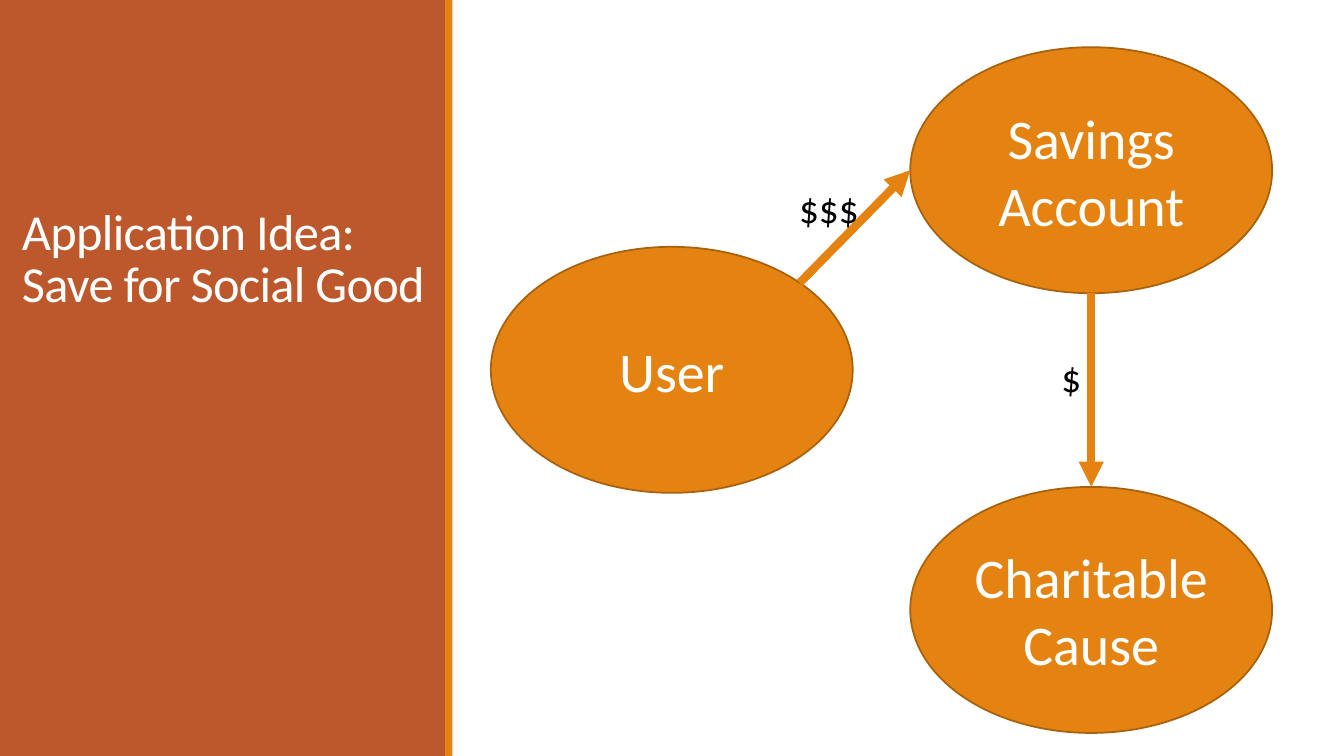
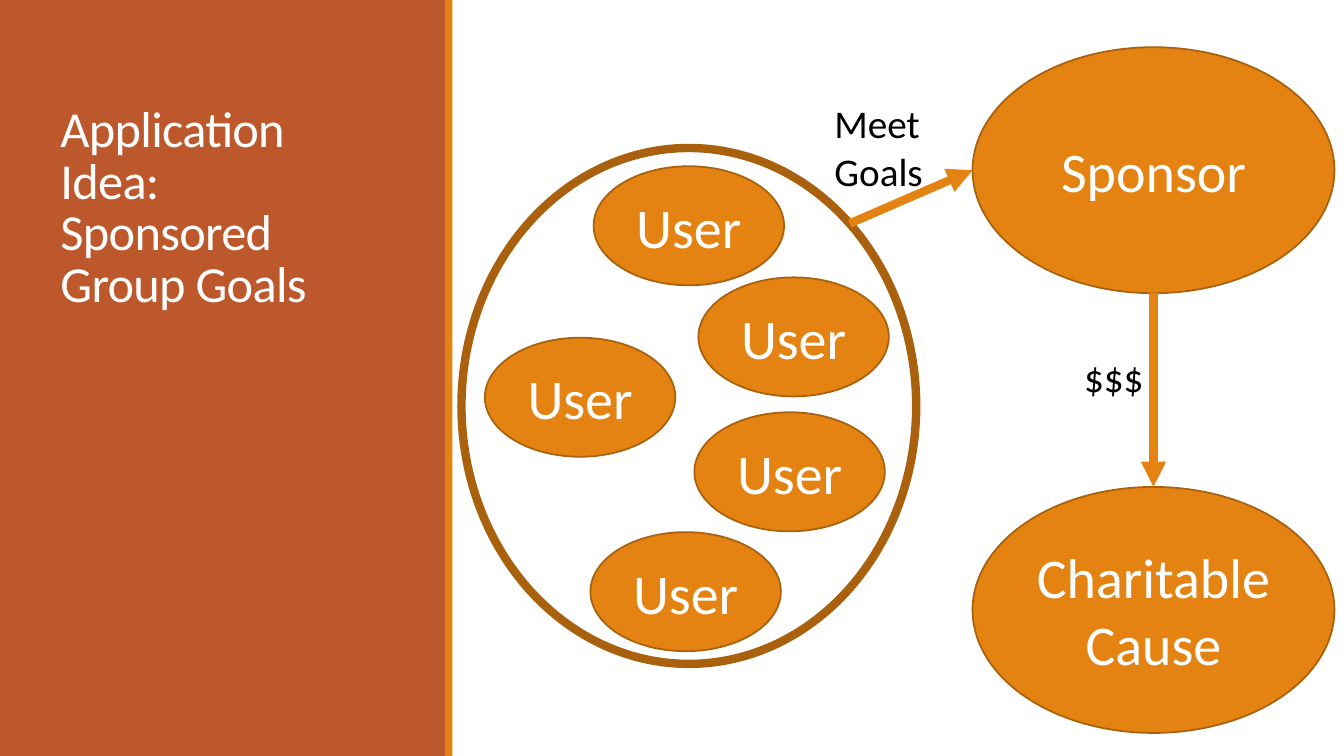
import math

import pptx
import pptx.dml.color
import pptx.enum.shapes
import pptx.enum.text
import pptx.oxml
import pptx.oxml.ns
import pptx.util
from lxml import etree

Cm, Pt = pptx.util.Cm, pptx.util.Pt
Shape = pptx.enum.shapes.MSO_SHAPE
Align = pptx.enum.text.PP_ALIGN
Anchor = pptx.enum.text.MSO_ANCHOR
qn = pptx.oxml.ns.qn

FONT = "Calibri"
RUST, ORANGE, BROWN = "BD582C", "E48312", "A9610D"
WHITE, BLACK = "FFFFFF", "000000"
SLIDE_WIDTH, SLIDE_HEIGHT = 33.87, 19.05
BIG_OVAL = (9.12, 6.2)
USER_OVAL = (4.8, 3)
PAYOUT_DROP = 11.08


def color(value):
    return pptx.dml.color.RGBColor.from_string(value)


def style_text(frame, size, ink, align):
    for para in frame.paragraphs:
        para.alignment = align
        para.font.name = FONT
        para.font.size = Pt(size)
        para.font.color.rgb = color(ink)


def add_panel(page, layout):
    """Put the side panel in the layout, behind its placeholders."""
    bands = [(0, 11.25, RUST), (11.22, 0.18, ORANGE)]
    for index, (left, width, fill) in enumerate(bands):
        band = page.shapes.add_shape(
            Shape.RECTANGLE, Cm(left), 0, Cm(width), Cm(SLIDE_HEIGHT))
        band.shadow.inherit = False
        band.fill.solid()
        band.fill.fore_color.rgb = color(fill)
        band.line.fill.background()
        layout.shapes.element.insert(2 + index, band.element)


def set_title(page, text, left, width):
    title = page.shapes.title
    title.left, title.top = Cm(left), Cm(1.65)
    title.width, title.height = Cm(width), Cm(6.35)
    frame = title.text_frame
    frame.text = text
    frame.word_wrap = True
    frame.auto_size = pptx.enum.text.MSO_AUTO_SIZE.NONE
    frame.vertical_anchor = Anchor.BOTTOM
    style_text(frame, 36, WHITE, Align.LEFT)
    para = frame.paragraphs[0]
    para.line_spacing = 0.85
    for span in para.runs:
        span.font.element.set("spc", "-50") if hasattr(span.font, "element") \
            else span._r.get_or_add_rPr().set("spc", "-50")


def add_oval(page, left, top, size, text="", fill=ORANGE, line_width=1.25):
    oval = page.shapes.add_shape(
        Shape.OVAL, Cm(left), Cm(top), Cm(size[0]), Cm(size[1]))
    oval.shadow.inherit = False
    if fill:
        oval.fill.solid()
        oval.fill.fore_color.rgb = color(fill)
    else:
        oval.fill.background()
    oval.line.color.rgb = color(BROWN)
    oval.line.width = Pt(line_width)
    if text:
        frame = oval.text_frame
        frame.text = text
        frame.word_wrap = True
        frame.vertical_anchor = Anchor.MIDDLE
        style_text(frame, 40, WHITE, Align.CENTER)
    return oval


def rim_point(oval, degrees):
    """Point on the oval's outline, counted anticlockwise from the right."""
    angle = math.radians(degrees)
    x = oval.left + oval.width / 2 * (1 + math.cos(angle))
    y = oval.top + oval.height / 2 * (1 - math.sin(angle))
    return round(x), round(y)


def add_arrow(page, start, end):
    arrow = page.shapes.add_connector(
        pptx.enum.shapes.MSO_CONNECTOR.STRAIGHT, *start, *end)
    arrow.line.color.rgb = color(ORANGE)
    arrow.line.width = Pt(6)
    properties = arrow.element.spPr
    etree.SubElement(properties.find(qn("a:ln")), qn("a:tailEnd"), type="triangle")
    etree.SubElement(properties, qn("a:effectLst"))


def add_label(page, left, top, width, height, text, align=Align.LEFT):
    box = page.shapes.add_textbox(Cm(left), Cm(top), Cm(width), Cm(height))
    box.text_frame.word_wrap = True
    box.text_frame.text = text
    style_text(box.text_frame, 28, BLACK, align)


def add_payout(page, left, top, payer, amount):
    """Draw the payer above the cause it pays, and return the payer."""
    source = add_oval(page, left, top, BIG_OVAL, payer)
    cause = add_oval(page, left, top + PAYOUT_DROP, BIG_OVAL, "Charitable Cause")
    add_arrow(page, rim_point(source, 270), rim_point(cause, 90))
    label_width = 2.03
    add_label(page, left + BIG_OVAL[0] / 2 - label_width, top + 7.6,
              label_width, 1.44, amount, Align.RIGHT)
    return source


def add_user_group(page, left, top):
    """Draw the users inside a ring, and return the ring."""
    offsets = [(5.97, 3.26), (5.87, 6.66), (3.33, 0.46), (0.59, 4.78), (3.25, 9.68)]
    for across, down in offsets:
        add_oval(page, left + across, top + down, USER_OVAL, "User")
    return add_oval(page, left, top, (11.46, 13), fill=None, line_width=6)


def build_savings(page):
    set_title(page, "Application Idea:\vSave for Social Good", 0.3, 10.72)
    user = add_oval(page, 12.37, 6.22, BIG_OVAL, "User")
    account = add_payout(page, 22.94, 1.19, "Savings Account", "$")
    add_arrow(page, rim_point(user, 45), rim_point(account, 180))
    add_label(page, 19.89, 4.52, 2.34, 1.44, "$$$")


def build_sponsored(page):
    set_title(page, "Application Idea:\vSponsored Group Goals", 1.27, 8.8)
    sponsor = add_payout(page, 24.51, 1.19, "Sponsor", "$$$")
    group = add_user_group(page, 11.63, 3.73)
    add_arrow(page, rim_point(group, 45), rim_point(sponsor, 180))
    add_label(page, 20.78, 2.39, 3.23, 2.64, "Meet Goals")


def main():
    deck = pptx.Presentation()
    deck.slide_width, deck.slide_height = Cm(SLIDE_WIDTH), Cm(SLIDE_HEIGHT)
    layout = deck.slide_layouts.get_by_name("Title Only")
    pages = [deck.slides.add_slide(layout) for _ in range(2)]
    add_panel(pages[0], layout)
    build_savings(pages[0])
    build_sponsored(pages[1])
    deck.save("out.pptx")


if __name__ == "__main__":
    main()
